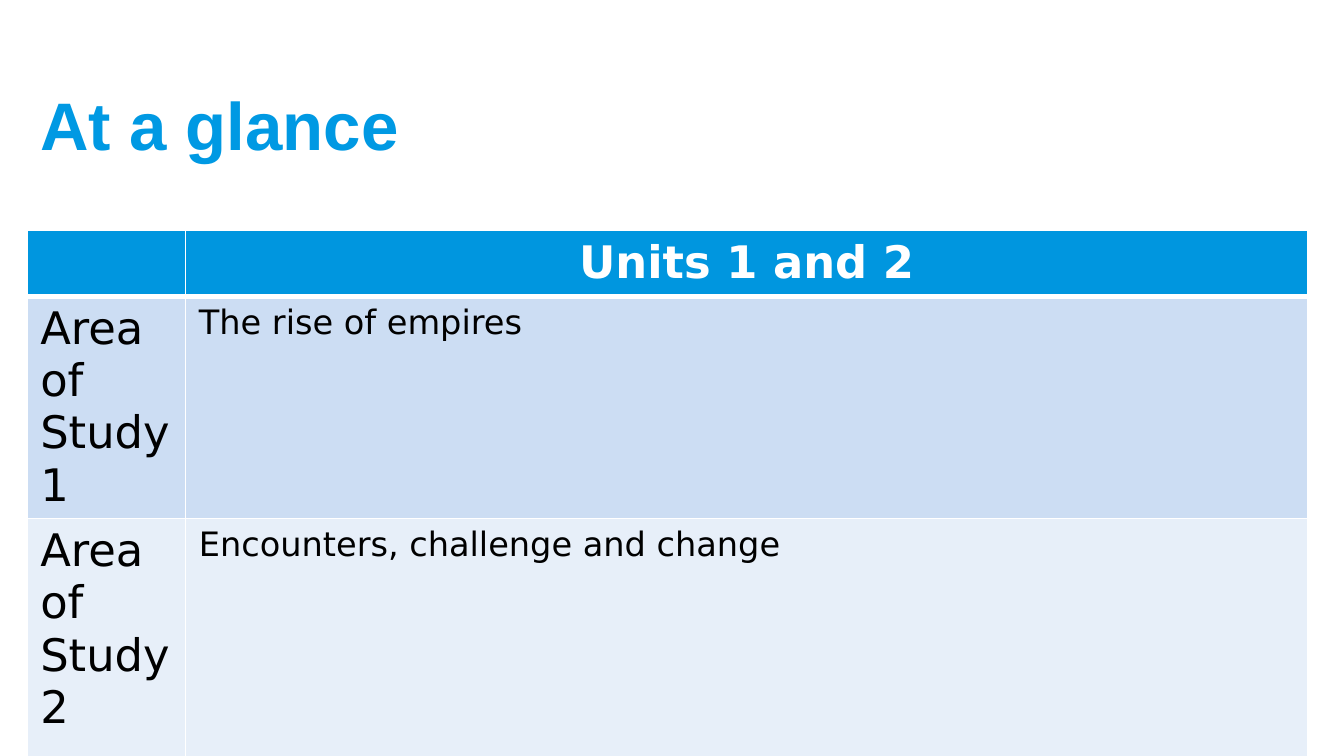
from lxml.etree import SubElement
from pptx import Presentation
from pptx.dml.color import RGBColor as RGB
from pptx.enum.text import MSO_ANCHOR as Anchor, PP_ALIGN as Align
from pptx.oxml.ns import qn
from pptx.util import Pt

COLORS = {
    "title": "0099E3",
    "header": "0096DF",
    "odd": "CCDDF3",
    "even": "E7EFF9",
    "white": "FFFFFF",
    "black": "000000",
}


def write(text_frame, text, font, size, color, bold=False, align=Align.LEFT):
    paragraph = text_frame.paragraphs[0]
    paragraph.alignment = align
    run = paragraph.add_run()
    run.text = text
    run.font.name = font
    run.font.size = Pt(size)
    run.font.bold = bold
    run.font.color.rgb = RGB.from_string(COLORS[color])


class SlideBuilder:
    title_font = "Arial"
    body_font = "DejaVu Sans"
    left = 14.4
    width = 686.16

    def __init__(self, slide):
        self.slide = slide

    def title(self, text, top, height):
        shape = self.slide.shapes.title
        shape.left, shape.top = Pt(self.left), Pt(top)
        shape.width, shape.height = Pt(self.width), Pt(height)
        shape.text_frame.word_wrap = True
        shape.text_frame.vertical_anchor = Anchor.MIDDLE
        write(shape.text_frame, text, self.title_font, 36, "title", bold=True)

    def border(self, cell, **widths):
        properties = cell._tc.get_or_add_tcPr()
        for side, width in widths.items():
            line = SubElement(properties, qn(f"a:ln{side}"), w=str(Pt(width)))
            fill = SubElement(line, qn("a:solidFill"))
            SubElement(fill, qn("a:srgbClr"), val=COLORS["white"])

    def table(self, rows, top, column_widths, row_heights):
        frame = self.slide.shapes.add_table(
            len(rows), len(column_widths), Pt(self.left), Pt(top),
            Pt(self.width), Pt(sum(row_heights)))
        table = frame.table
        for column, width in zip(table.columns, column_widths):
            column.width = Pt(width)
        for row, height in zip(table.rows, row_heights):
            row.height = Pt(height)
        for row_index, texts in enumerate(rows):
            header = row_index == 0
            band = "header" if header else "odd" if row_index % 2 else "even"
            for column_index, text in enumerate(texts):
                cell = table.cell(row_index, column_index)
                self.border(cell, L=1, R=1, T=3 if row_index == 1 else 1,
                            B=3 if header else 1)
                cell.fill.solid()
                cell.fill.fore_color.rgb = RGB.from_string(COLORS[band])
                if text:
                    write(cell.text_frame, text, self.body_font,
                          24 if header or column_index == 0 else 18,
                          "white" if header else "black", bold=header,
                          align=Align.CENTER if header else Align.LEFT)


def main():
    presentation = Presentation()
    presentation.slide_width, presentation.slide_height = Pt(720), Pt(405)
    builder = SlideBuilder(
        presentation.slides.add_slide(presentation.slide_layouts[5]))
    builder.title("At a glance", top=32.4, height=67.68)
    builder.table(
        [("", "Units 1 and 2"),
         ("Area of Study 1", "The rise of empires"),
         ("Area of Study 2", "Encounters, challenge and change")],
        top=123.5, column_widths=(84.96, 601.2),
        row_heights=(34.8, 118.7, 128))
    presentation.save("out.pptx")


if __name__ == "__main__":
    main()
